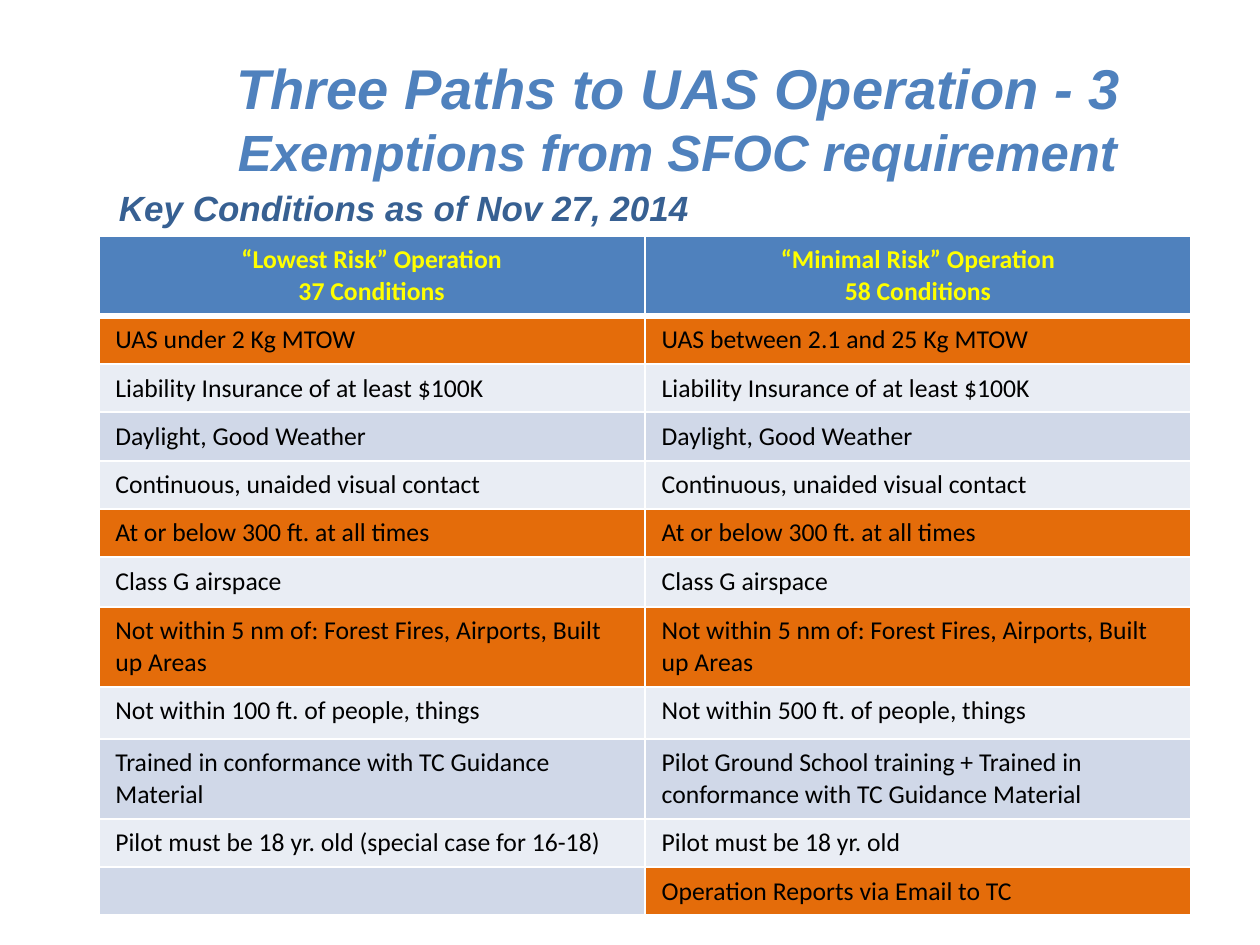
from pptx import Presentation
from pptx.dml.color import RGBColor
from pptx.enum.text import MSO_ANCHOR, PP_ALIGN
from pptx.oxml import parse_xml
from pptx.oxml.ns import nsdecls
from pptx.util import Cm, Pt

CENTER, LEFT = PP_ALIGN.CENTER, PP_ALIGN.LEFT
TOP, MIDDLE = MSO_ANCHOR.TOP, MSO_ANCHOR.MIDDLE

BLUE = RGBColor(0x4F, 0x81, 0xBD)
DARK_BLUE = RGBColor(0x37, 0x60, 0x92)
YELLOW = RGBColor(0xFF, 0xFF, 0x00)
BLACK = RGBColor(0x00, 0x00, 0x00)
WHITE = RGBColor(0xFF, 0xFF, 0xFF)
ORANGE = RGBColor(0xE4, 0x6C, 0x0A)
DARK_BAND = RGBColor(0xD0, 0xD8, 0xE8)
LIGHT_BAND = RGBColor(0xE9, 0xED, 0xF4)

ONE_LINE, TWO_LINES = 0.73, 1.21
TABLE_SIZE = 11
HEADINGS = [
    ["“Lowest Risk” Operation", "37 Conditions"],
    ["“Minimal Risk” Operation", "58 Conditions"],
]
CONDITIONS = [
    ("UAS under 2 Kg MTOW", "UAS between 2.1 and 25 Kg MTOW", ONE_LINE),
    ("Liability Insurance of at least $100K",
     "Liability Insurance of at least $100K", ONE_LINE),
    ("Daylight, Good Weather", "Daylight, Good Weather", ONE_LINE),
    ("Continuous, unaided visual contact",
     "Continuous, unaided visual contact", ONE_LINE),
    ("At or below 300 ft. at all times",
     "At or below 300 ft. at all times", ONE_LINE),
    ("Class G airspace", "Class G airspace", 0.75),
    ("Not within 5 nm of: Forest Fires, Airports, Built up Areas",
     "Not within 5 nm of: Forest Fires, Airports, Built up Areas", TWO_LINES),
    ("Not within 100 ft. of people, things",
     "Not within 500 ft. of people, things", 0.78),
    ("Trained in conformance with TC Guidance Material",
     "Pilot Ground School training + Trained in conformance with TC Guidance Material",
     TWO_LINES),
    ("Pilot must be 18 yr. old (special case for 16-18)",
     "Pilot must be 18 yr. old", ONE_LINE),
    ("", "Operation Reports via Email to TC", ONE_LINE),
]
HIGHLIGHTS = {(1, 0), (1, 1), (5, 0), (5, 1), (7, 0), (7, 1), (11, 1)}


def add_span(para, text, size, color, font="Arial", bold=True, italic=True):
    """Add one formatted run to a paragraph."""
    span = para.add_run()
    span.text = text
    span.font.name = font
    span.font.size = Pt(size)
    span.font.bold = bold
    span.font.italic = italic
    span.font.color.rgb = color


def add_text_box(page, left, top, width, height, lines, color, align=LEFT, anchor=TOP):
    """Add a text box whose lines, given with their sizes, share one paragraph."""
    box = page.shapes.add_textbox(Cm(left), Cm(top), Cm(width), Cm(height))
    frame = box.text_frame
    frame.word_wrap = True
    frame.vertical_anchor = anchor
    para = frame.paragraphs[0]
    para.alignment = align
    for index, (text, size) in enumerate(lines):
        if index:
            para.add_line_break()
        add_span(para, text, size, color)


def set_borders(cell, bottom):
    """Draw white borders around a cell, with its own bottom width."""
    properties = cell._tc.get_or_add_tcPr()
    widths = {"lnL": 1, "lnR": 1, "lnT": 1, "lnB": bottom}
    for index, (side, width) in enumerate(widths.items()):
        properties.insert(index, parse_xml(
            f'<a:{side} {nsdecls("a")} w="{Pt(width)}"><a:solidFill>'
            f'<a:srgbClr val="{WHITE}"/></a:solidFill></a:{side}>'))


def fill_cell(cell, lines, fill, color=BLACK, bold=False, align=LEFT, bottom=1):
    """Write the lines of a cell and set its fill and borders."""
    cell.fill.solid()
    cell.fill.fore_color.rgb = fill
    set_borders(cell, bottom)
    frame = cell.text_frame
    for index, text in enumerate(lines):
        para = frame.add_paragraph() if index else frame.paragraphs[0]
        para.alignment = align
        if text:
            add_span(para, text, TABLE_SIZE, color, "Calibri", bold, False)
        else:
            para._p.append(parse_xml(
                f'<a:endParaRPr {nsdecls("a")} sz="{TABLE_SIZE * 100}"/>'))


def add_conditions_table(page, left, top, width):
    """Add the two-column comparison of exemption conditions."""
    heights = [TWO_LINES] + [height for _, _, height in CONDITIONS]
    table = page.shapes.add_table(
        len(heights), 2, Cm(left), Cm(top), Cm(width), Cm(sum(heights))).table
    for column in table.columns:
        column.width = Cm(width / 2)
    for row, height in zip(table.rows, heights):
        row.height = Cm(height)
    for column, heading in enumerate(HEADINGS):
        fill_cell(table.cell(0, column), heading, BLUE, YELLOW, True, CENTER, 3)
    for row, (lowest, minimal, _) in enumerate(CONDITIONS, 1):
        band = DARK_BAND if row % 2 else LIGHT_BAND
        for column, text in enumerate((lowest, minimal)):
            fill = ORANGE if (row, column) in HIGHLIGHTS else band
            fill_cell(table.cell(row, column), [text], fill)


def main():
    """Build the slide and save the deck."""
    deck = Presentation()
    deck.slide_width, deck.slide_height = Cm(19.05), Cm(14.28)
    page = deck.slides.add_slide(deck.slide_layouts[6])
    add_text_box(page, 1.68, 0.58, 17.15, 2.39,
                 [("Three Paths to UAS Operation - 3", 24),
                  ("Exemptions from SFOC requirement", 21.8)],
                 BLUE, CENTER, MIDDLE)
    add_text_box(page, 1.55, 2.69, 17, 0.85,
                 [("Key Conditions as of Nov 27, 2014", 15)], DARK_BLUE)
    add_conditions_table(page, 1.49, 3.56, 16.52)
    deck.save("out.pptx")


if __name__ == "__main__":
    main()
